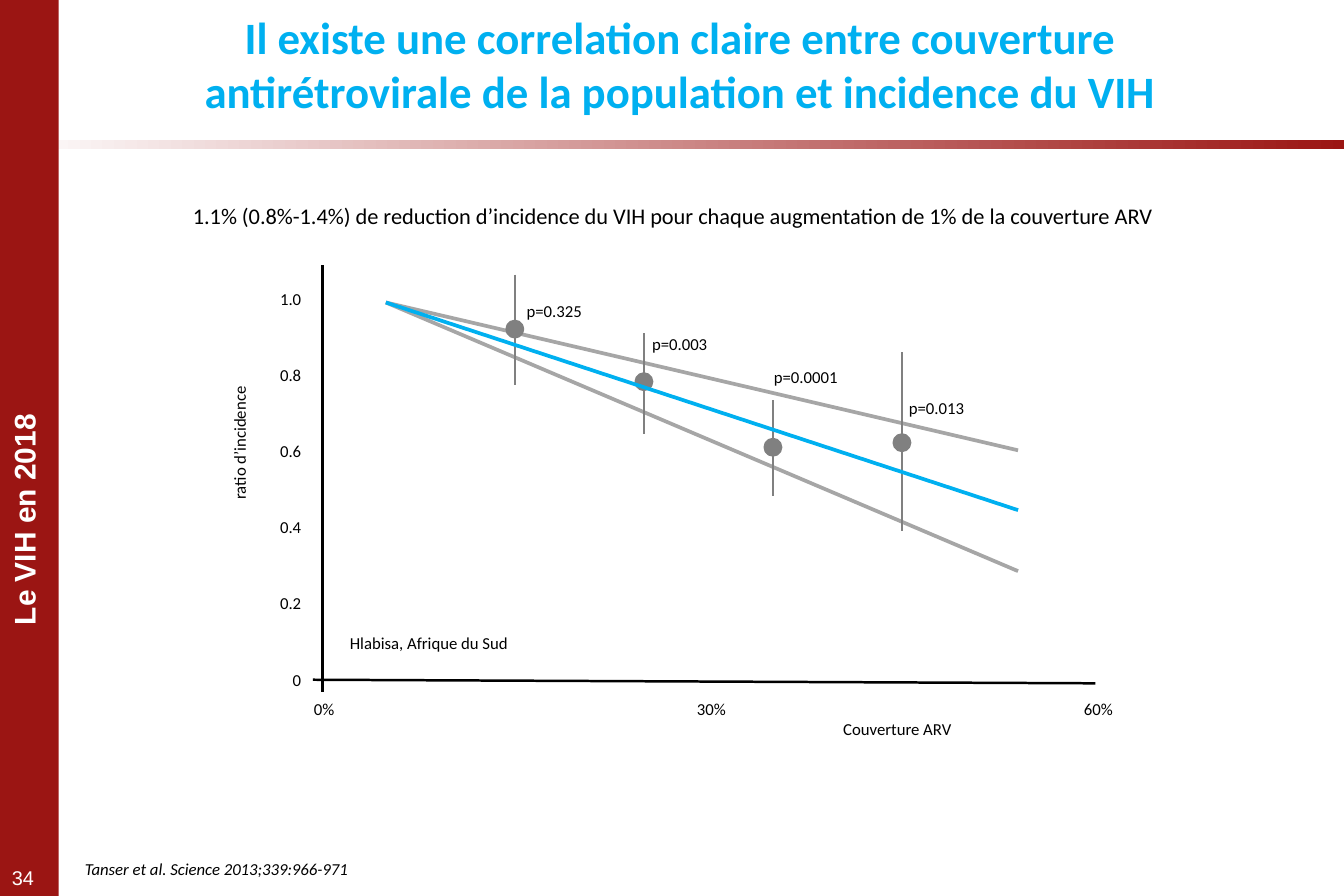
from dataclasses import dataclass

from lxml.etree import SubElement
from pptx import Presentation
from pptx.dml.color import RGBColor
from pptx.enum.shapes import MSO_CONNECTOR as CONNECTOR, MSO_SHAPE as SHAPE
from pptx.enum.text import MSO_AUTO_SIZE as AUTO_SIZE, PP_ALIGN as ALIGN
from pptx.oxml.ns import qn
from pptx.util import Inches, Pt


@dataclass(frozen=True)
class Theme:
    red: str = "9B1513"
    blue: str = "00B0F0"
    band_grey: str = "A6A6A6"
    point_grey: str = "808080"
    black: str = "000000"
    white: str = "FFFFFF"
    body_font: str = "Calibri"
    frame_font: str = "Arial"
    title: float = 27
    section: float = 18
    message: float = 13.5
    number: float = 12
    label: float = 10.1
    thin: float = 1.5
    thick: float = 2.25


THEME = Theme()
LABEL_HEIGHT = 0.27

# Coverage %, incidence ratio %, interval low and high, p label, its offset (in), height %, width (in)
POINTS = [
    (15, 92, 77.4, 106.3, "p=0.325", 0, 96.7, 0.67),
    (25, 78.2, 64.6, 90.9, "p=0.003", -0.03, 88.2, 0.67),
    (35, 61, 48.3, 73.4, "p=0.0001", -0.09, 79.5, 0.74),
    (45, 62.2, 38.9, 85.9, "p=0.013", -0.04, 71.3, 0.67),
]
TREND_START = (5, 99)
TREND_END_COVERAGE = 54
BAND_ENDS = (60.2, 28.5)
TREND_END = 44.5


def add_text(slide, text, box, size=THEME.label, color=THEME.black, font=THEME.body_font,
             bold=False, italic=False, align=ALIGN.LEFT, wrap=False, rotation=0, inset=None):
    shape = slide.shapes.add_textbox(*map(Inches, box))
    shape.rotation = rotation
    frame = shape.text_frame
    frame.word_wrap = wrap
    frame.auto_size = AUTO_SIZE.SHAPE_TO_FIT_TEXT
    if inset is not None:
        frame.margin_left = frame.margin_right = Inches(inset)
        frame.margin_top = frame.margin_bottom = Inches(inset)
    paragraph = frame.paragraphs[0]
    paragraph.alignment = align
    run = paragraph.add_run()
    run.text = text
    run.font.size = Pt(size)
    run.font.name = font
    run.font.bold = bold
    run.font.italic = italic
    run.font.color.rgb = RGBColor.from_string(color)


def add_line(slide, start, end, color, width=THEME.thin):
    line = slide.shapes.add_connector(CONNECTOR.STRAIGHT, *map(Inches, (*start, *end)))
    line.line.color.rgb = RGBColor.from_string(color)
    line.line.width = Pt(width)
    SubElement(line._element.spPr, qn("a:effectLst"))


def add_filled(slide, kind, box, color):
    shape = slide.shapes.add_shape(kind, *map(Inches, box))
    shape.shadow.inherit = False
    shape.fill.solid()
    shape.fill.fore_color.rgb = RGBColor.from_string(color)
    shape.line.fill.background()
    return shape


def add_header(slide, box):
    left, top, width, height = box
    # Fading rule below the title
    rule = add_filled(slide, SHAPE.RECTANGLE, (left, top + height, width, 0.08), THEME.red)
    rule.fill.gradient()
    rule.fill.gradient_angle = 0
    for stop, position, color in zip(rule.fill.gradient_stops, (0, 1), (THEME.white, THEME.red)):
        stop.position = position
        stop.color.rgb = RGBColor.from_string(color)
    add_text(slide, "Il existe une correlation claire entre couverture antirétrovirale "
             "de la population et incidence du VIH", (left + 1.47, top + 0.03, 8.44, 1.01),
             size=THEME.title, color=THEME.blue, bold=True, align=ALIGN.CENTER, wrap=True)


def add_sidebar(slide, box):
    left, top, width, height = box
    add_filled(slide, SHAPE.RECTANGLE, box, THEME.red)
    add_text(slide, "Le VIH en 2018", (left - 0.79, top + 4.15, 1.98, 0.4), size=THEME.section,
             color=THEME.white, font=THEME.frame_font, bold=True, align=ALIGN.CENTER, rotation=270)
    add_text(slide, "34", (left, top + height - 0.3, width, 0.3), size=THEME.number,
             color=THEME.white, font=THEME.frame_font, wrap=True)


def add_incidence_plot(slide, box):
    """Plot in a box that spans 0 to 60% coverage and a ratio of 0 to 1.0."""
    left, top, width, height = box
    bottom, right = top + height, left + width

    def place(coverage, ratio):
        return left + width * coverage / 60, bottom - height * ratio / 100

    # Labels
    add_text(slide, "Hlabisa, Afrique du Sud", (left + 0.14, bottom - 0.44, 1.55, LABEL_HEIGHT))
    add_text(slide, "ratio d’incidence", (left - 1.27, top + 1.06, 1.17, LABEL_HEIGHT), rotation=270)
    add_text(slide, "Couverture ARV", (left + 4.27, bottom + 0.28, 1.13, LABEL_HEIGHT))
    for index, tick in enumerate(("0", "0.2", "0.4", "0.6", "0.8", "1.0")):
        y = place(0, index * 20)[1]
        tick_width = 0.38 if index else 0.27
        add_text(slide, tick, (left - 0.07 - tick_width, y - LABEL_HEIGHT / 2, tick_width, LABEL_HEIGHT),
                 align=ALIGN.RIGHT)
    for coverage, tick_width in ((0, 0.38), (30, 0.45), (60, 0.45)):
        x = place(coverage, 0)[0] + 0.03
        add_text(slide, f"{coverage}%", (x - tick_width / 2, bottom + 0.11, tick_width, LABEL_HEIGHT))

    # Confidence band
    for ratio in BAND_ENDS:
        add_line(slide, place(*TREND_START), place(TREND_END_COVERAGE, ratio),
                 THEME.band_grey, THEME.thick)

    # Estimates with their intervals
    diameter = 0.13
    for coverage, ratio, low, high, label, offset, label_ratio, label_width in POINTS:
        add_line(slide, place(coverage, high), place(coverage, low), THEME.point_grey)
        x, y = place(coverage, ratio)
        dot = add_filled(slide, SHAPE.OVAL, (x - diameter / 2, y - diameter / 2, diameter, diameter),
                         THEME.point_grey)
        dot.line.color.rgb = RGBColor.from_string(THEME.point_grey)
        dot.line.width = Pt(2)
        label_y = place(coverage, label_ratio)[1]
        add_text(slide, label, (x + offset, label_y - LABEL_HEIGHT / 2, label_width, LABEL_HEIGHT))

    # Axes and trend
    add_line(slide, (left - 0.07, bottom), (right, bottom + 0.03), THEME.black)
    add_line(slide, place(*TREND_START), place(TREND_END_COVERAGE, TREND_END), THEME.blue, THEME.thick)
    add_line(slide, (left + 0.01, top - 0.28), (left + 0.01, bottom + 0.1), THEME.black)


def add_body(slide, box):
    left, top, width, height = box
    add_text(slide, "1.1% (0.8%-1.4%) de reduction d’incidence du VIH pour chaque augmentation "
             "de 1% de la couverture ARV", (left + 0.92, top + 0.39, 8.44, 0.33),
             size=THEME.message, align=ALIGN.CENTER, wrap=True)
    add_incidence_plot(slide, (left + 2.2, top + 1.25, 6.48, 3.19))
    add_text(slide, "Tanser et al. Science 2013;339:966-971",
             (left + 0.22, top + height - 0.31, 3.99, 0.24), italic=True, wrap=True, inset=0)


def main():
    presentation = Presentation()
    presentation.slide_width = Inches(11.25)
    presentation.slide_height = Inches(7.5)
    slide = presentation.slides.add_slide(presentation.slide_layouts[6])
    add_header(slide, (0, 0, 11.25, 1.17))
    add_sidebar(slide, (0, 0, 0.49, 7.5))
    add_body(slide, (0.49, 1.25, 10.76, 6.25))
    presentation.save("out.pptx")


if __name__ == "__main__":
    main()
